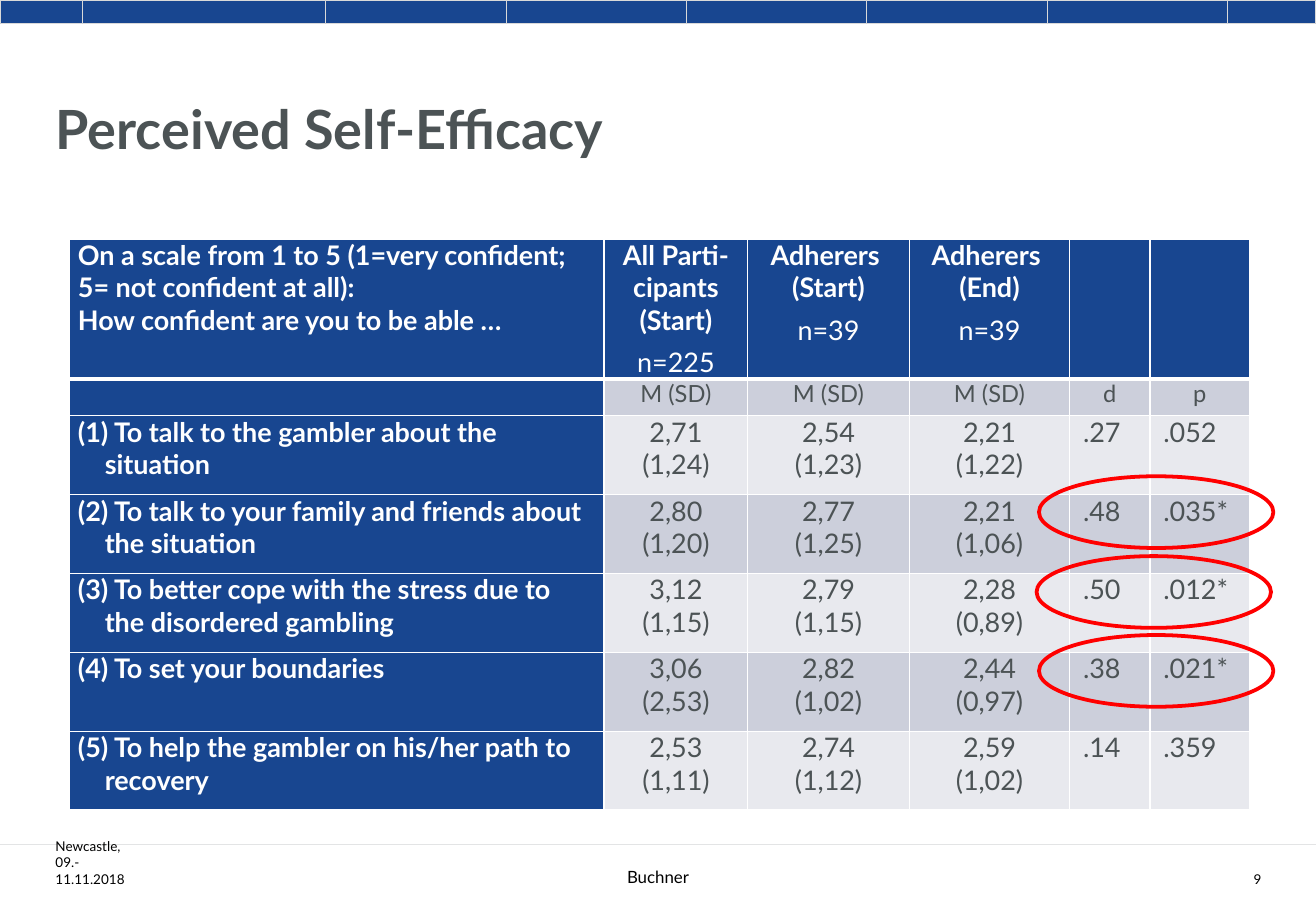
import pptx
import pptx.util
import pptx.dml.color
import pptx.enum.shapes
import pptx.enum.text
import pptx.oxml.ns
import lxml.etree

Cm, Pt = pptx.util.Cm, pptx.util.Pt
ALIGN = pptx.enum.text.PP_ALIGN
SHAPE = pptx.enum.shapes.MSO_SHAPE
qn = pptx.oxml.ns.qn

COLORS = {
    "blue": "184690", "text": "4C5355", "white": "FFFFFF", "black": "000000",
    "dark_band": "CCCFDB", "light_band": "E8E9EE",
    "edge": "D9D9D9", "rule": "E3E4E5", "mark": "FF0000",
}
WIDTH, HEIGHT = 27.51, 19.05

QUESTION = ("On a scale from 1 to 5 (1=very confident; 5= not confident at all):\n"
            "How confident are you to be able …")
HEADER = [
    [QUESTION],
    ["All Parti-cipants\n(Start)", "n=225"],
    ["Adherers \n(Start)", "n=39"],
    ["Adherers \n(End)", "n=39"],
    [""],
    [""],
]
UNITS = ["", "M (SD)", "M (SD)", "M (SD)", "d", "p"]
ITEMS = [
    ["(1) To talk to the gambler about the situation",
     "2,71\n(1,24)", "2,54\n(1,23)", "2,21\n(1,22)", ".27", ".052"],
    ["(2) To talk to your family and friends about the situation",
     "2,80\n(1,20)", "2,77\n(1,25)", "2,21\n(1,06)", ".48", ".035*"],
    ["(3) To better cope with the stress due to the disordered gambling",
     "3,12\n(1,15)", "2,79\n(1,15)", "2,28\n(0,89)", ".50", ".012*"],
    ["(4) To set your boundaries",
     "3,06\n(2,53)", "2,82\n(1,02)", "2,44\n(0,97)", ".38", ".021*"],
    ["(5) To help the gambler on his/her path to recovery",
     "2,53\n(1,11)", "2,74\n(1,12)", "2,59\n(1,02)", ".14", ".359"],
]
COLUMNS = [11.18, 3, 3.38, 3.35, 1.68, 2.08]
ROWS = [2.88, 0.77] + [1.65] * len(ITEMS)


class Page:
    """Current slide and its style."""
    face = "Lato"

    def __init__(self, deck):
        self.shapes = deck.slides.add_slide(deck.slide_layouts[6]).shapes

    def color(self, name):
        return pptx.dml.color.RGBColor.from_string(COLORS[name])

    def style(self, para, size, color, bold=False, align=ALIGN.LEFT):
        para.alignment = align
        para.font.name = self.face
        para.font.size = Pt(size)
        para.font.bold = bold
        para.font.color.rgb = self.color(color)

    def shape(self, kind, left, top, width, height, line, weight, fill=None):
        shape = self.shapes.add_shape(kind, Cm(left), Cm(top), Cm(width), Cm(height))
        shape.shadow.inherit = False
        if fill:
            shape.fill.solid()
            shape.fill.fore_color.rgb = self.color(fill)
        else:
            shape.fill.background()
        shape.line.color.rgb = self.color(line)
        shape.line.width = Pt(weight)

    def rule(self, top, color, weight):
        rule = self.shapes.add_connector(
            pptx.enum.shapes.MSO_CONNECTOR.STRAIGHT, 0, Cm(top), Cm(WIDTH), Cm(top))
        rule.line.color.rgb = self.color(color)
        rule.line.width = Pt(weight)
        lxml.etree.SubElement(rule._element.spPr, qn("a:effectLst"))

    def text(self, text, left, top, width, height, size, color, **look):
        box = self.shapes.add_textbox(Cm(left), Cm(top), Cm(width), Cm(height))
        frame = box.text_frame
        frame.word_wrap = True
        frame.vertical_anchor = pptx.enum.text.MSO_ANCHOR.BOTTOM
        para = frame.paragraphs[0]
        para.text = text
        self.style(para, size, color, **look)

    def table(self, left, top, columns, rows):
        table = self.shapes.add_table(len(rows), len(columns), Cm(left), Cm(top),
                                      Cm(sum(columns)), Cm(sum(rows))).table
        for column, width in zip(table.columns, columns):
            column.width = Cm(width)
        for row, height in zip(table.rows, rows):
            row.height = Cm(height)
        return table

    def cell(self, cell, texts, fill, size, color, bolds, align=ALIGN.LEFT,
             margin=0, indent=0, bottom=1):
        cell.margin_left = cell.margin_right = Cm(0.18)
        cell.margin_top = cell.margin_bottom = 0
        cell.fill.solid()
        cell.fill.fore_color.rgb = self.color(fill)
        self.borders(cell, bottom)
        frame = cell.text_frame
        for index, (text, bold) in enumerate(zip(texts, bolds)):
            para = frame.add_paragraph() if index else frame.paragraphs[0]
            para.text = text
            para.space_before = Pt(3 if index else 0)
            para.space_after = Pt(3)
            if margin:
                props = para._p.get_or_add_pPr()
                props.set("marL", str(Cm(margin)))
                props.set("indent", str(Cm(indent)))
            self.style(para, size, color, bold, align)

    def borders(self, cell, bottom):
        props = cell._tc.get_or_add_tcPr()
        weights = {"a:lnL": 1, "a:lnR": 1, "a:lnT": 1, "a:lnB": bottom}
        for index, (tag, weight) in enumerate(weights.items()):
            line = lxml.etree.Element(qn(tag), w=str(Pt(weight)))
            fill = lxml.etree.SubElement(line, qn("a:solidFill"))
            lxml.etree.SubElement(fill, qn("a:srgbClr"), val=COLORS["white"])
            props.insert(index, line)


def main():
    deck = pptx.Presentation()
    deck.slide_width, deck.slide_height = Cm(WIDTH), Cm(HEIGHT)
    page = Page(deck)

    # Footer rule and top band, overlapping from right to left
    page.rule(17.65, "rule", 0.5)
    for step in reversed(range(7)):
        left = 1.15 + 3.77 * step
        page.shape(SHAPE.RECTANGLE, left, 0, min(5.66, WIDTH - left), 0.5,
                   "edge", 0.5, "blue")
    page.shape(SHAPE.RECTANGLE, 0, 0, 1.73, 0.5, "edge", 0.5, "blue")

    # Title
    page.text("Perceived Self-Efficacy", 0.91, 1.07, 19.05, 2.41, 32, "text", bold=True)

    # Table header and units
    table = page.table(1.45, 5, COLUMNS, ROWS)
    for column, (texts, unit) in enumerate(zip(HEADER, UNITS)):
        align = ALIGN.CENTER if column else ALIGN.LEFT
        page.cell(table.cell(0, column), texts, "blue", 16, "white",
                  (True, False), align, bottom=3)
        page.cell(table.cell(1, column), [unit], "dark_band" if column else "blue",
                  14, "text", [False], ALIGN.CENTER)

    # Table items
    for row, values in enumerate(ITEMS, start=2):
        band = "dark_band" if row % 2 else "light_band"
        for column, value in enumerate(values):
            cell = table.cell(row, column)
            if column == 0:
                page.cell(cell, [value], "blue", 16, "white", [True],
                          margin=0.56, indent=-0.56)
            elif column < 4:
                page.cell(cell, [value], band, 16, "text", [False], ALIGN.CENTER)
            else:
                page.cell(cell, [value], band, 16, "text", [False], margin=0.1)

    # Marks around significant results
    for left, top in [(21.72, 9.96), (21.67, 11.63), (21.72, 13.28)]:
        page.shape(SHAPE.OVAL, left, top, 4.9, 1.5, "mark", 2.25)

    # Footer
    page.text("Newcastle, 09.-11.11.2018", 0.91, 17.65, 2.26, 1.02, 8, "black")
    page.text("Buchner", 4.93, 17.65, 17.65, 1.02, 10, "black", align=ALIGN.CENTER)
    page.text("9", 24.36, 17.65, 2.26, 1.02, 8, "black", align=ALIGN.RIGHT)

    deck.save("out.pptx")


if __name__ == "__main__":
    main()
